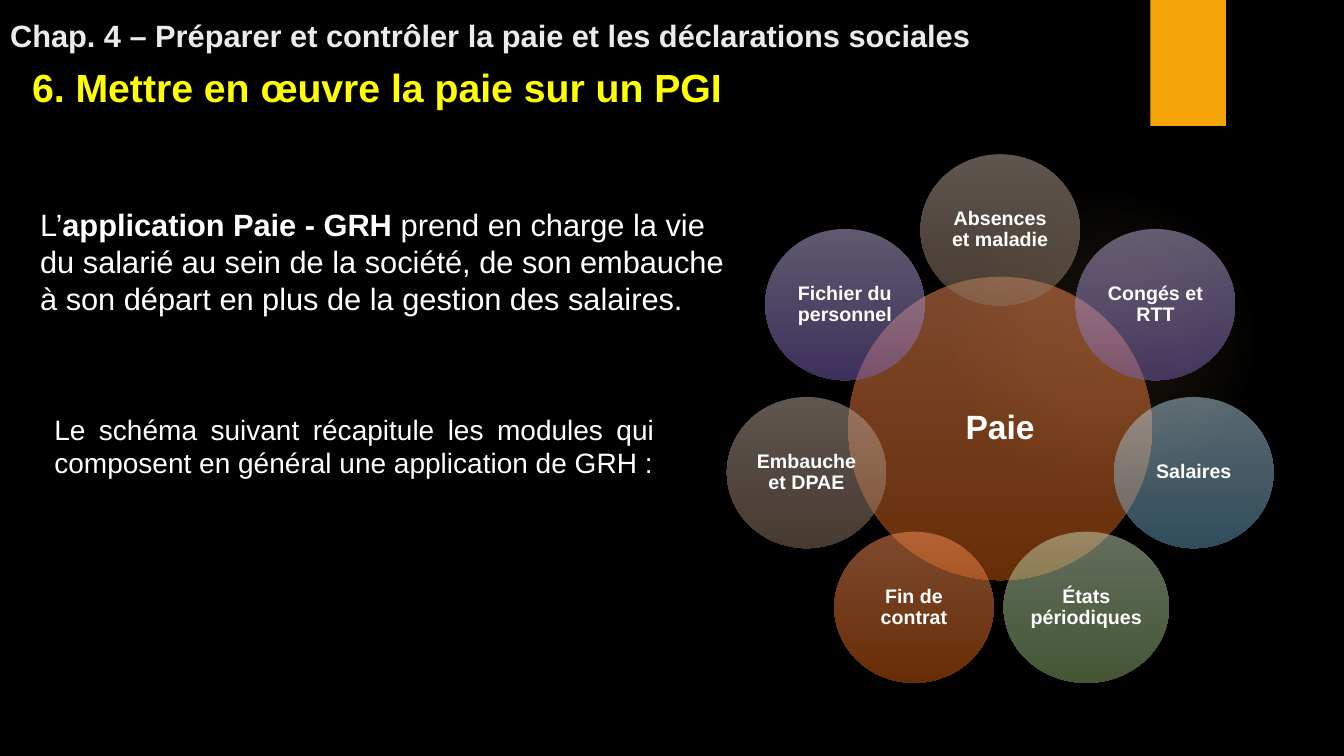
from math import cos, pi, sin

from pptx import Presentation
from pptx.dml.color import RGBColor
from pptx.enum.shapes import MSO_SHAPE
from pptx.enum.text import MSO_ANCHOR, MSO_AUTO_SIZE, PP_ALIGN
from pptx.oxml import parse_xml
from pptx.oxml.ns import nsdecls, qn
from pptx.util import Inches, Pt

BLACK = RGBColor(0x00, 0x00, 0x00)
WHITE = RGBColor(0xFF, 0xFF, 0xFF)
PALE = RGBColor(0xEB, 0xEB, 0xEB)
YELLOW = RGBColor(0xFF, 0xFF, 0x00)
AMBER = RGBColor(0xF5, 0xA4, 0x08)
GLOW = RGBColor(0xFA, 0xC9, 0x6A)
ORANGE = RGBColor(0xFB, 0x93, 0x5D), RGBColor(0xCF, 0x5B, 0x0F)
TAUPE = RGBColor(0xBE, 0xAC, 0x9F), RGBColor(0x8E, 0x74, 0x63)
PURPLE = RGBColor(0xC0, 0xB3, 0xDF), RGBColor(0x7B, 0x61, 0xB6)
BLUE = RGBColor(0xB5, 0xD2, 0xE1), RGBColor(0x63, 0x9B, 0xB8)
GREEN = RGBColor(0xC8, 0xDB, 0xB9), RGBColor(0x89, 0xAD, 0x6C)

DOWN = '<a:lin ang="5400000" scaled="0"/>'
ROUND = ('<a:path path="circle"><a:fillToRect l="50000" t="50000" '
         'r="50000" b="50000"/></a:path>')
HUB = 9.92, 4.25
REACH = 1.97
PARTS = [
    ("Absences et maladie", TAUPE, 1.58),
    ("Congés et RTT", PURPLE, 1.58),
    ("Salaires", BLUE, 1.58),
    ("États périodiques", GREEN, 1.64),
    ("Fin de contrat", ORANGE, 1.58),
    ("Embauche et DPAE", TAUPE, 1.58),
    ("Fichier du personnel", PURPLE, 1.58),
]


def add_run(para, text, size, color=WHITE, bold=False):
    """Add one formatted run to a paragraph."""
    run = para.add_run()
    run.text = text
    font = run.font
    font.name, font.size, font.bold = "Arial", Pt(size), bold
    font.color.rgb = color


def add_plain(slide, kind, left, top, width, height):
    """Add a preset shape without line or shadow."""
    shape = slide.shapes.add_shape(
        kind, Inches(left), Inches(top), Inches(width), Inches(height))
    shape.shadow.inherit = False
    shape.line.fill.background()
    return shape


def shade(shape, stops, course):
    """Fill a shape with (position, colour, opacity) stops in percent."""
    marks = "".join(
        f'<a:gs pos="{pos * 1000}"><a:srgbClr val="{color}">'
        f'<a:alpha val="{alpha * 1000}"/></a:srgbClr></a:gs>'
        for pos, color, alpha in stops)
    fill = parse_xml(f'<a:gradFill {nsdecls("a")} rotWithShape="1">'
                     f'<a:gsLst>{marks}</a:gsLst>{course}</a:gradFill>')
    shape._element.spPr.find(qn("a:prstGeom")).addnext(fill)


def add_disc(slide, text, tones, center, width, height, size, inset):
    """Add a translucent labelled disc around a centre."""
    x, y = center
    disc = add_plain(slide, MSO_SHAPE.OVAL,
                     x - width / 2, y - height / 2, width, height)
    shade(disc, [(0, tones[0], 50), (100, tones[1], 50)], DOWN)
    frame = disc.text_frame
    frame.word_wrap = True
    frame.vertical_anchor = MSO_ANCHOR.MIDDLE
    frame.margin_left = frame.margin_right = Inches(inset)
    frame.margin_top = frame.margin_bottom = Inches(inset)
    para = frame.paragraphs[0]
    para.alignment = PP_ALIGN.CENTER
    para.line_spacing = 0.9
    add_run(para, text, size, bold=True)


def add_wheel(slide):
    """Add the hub and its ring of modules."""
    add_disc(slide, "Paie", ORANGE, HUB, 3.01, 3.01, 24, 0.03)
    for i, (text, tones, width) in enumerate(PARTS):
        turn = 2 * pi * i / len(PARTS)
        center = HUB[0] + REACH * sin(turn), HUB[1] - REACH * cos(turn)
        add_disc(slide, text, tones, center, width, 1.5, 14, 0.02)


def add_text(slide, left, top, width, height, align=PP_ALIGN.LEFT):
    """Add a wrapping text box and return its paragraph."""
    box = slide.shapes.add_textbox(
        Inches(left), Inches(top), Inches(width), Inches(height))
    frame = box.text_frame
    frame.word_wrap = True
    frame.auto_size = MSO_AUTO_SIZE.SHAPE_TO_FIT_TEXT
    para = frame.paragraphs[0]
    para.alignment = align
    return para


def set_title(slide, text):
    """Place and format the chapter title."""
    title = slide.shapes.title
    title.left, title.top = Inches(0), Inches(-0.02)
    title.width, title.height = Inches(12.72), Inches(0.6)
    frame = title.text_frame
    frame.auto_size = MSO_AUTO_SIZE.NONE
    frame.vertical_anchor = MSO_ANCHOR.BOTTOM
    para = frame.paragraphs[0]
    para.alignment = PP_ALIGN.LEFT
    add_run(para, text, 22, PALE, True)


def main():
    """Build and save the slide."""
    deck = Presentation()
    deck.slide_width, deck.slide_height = Inches(13.33), Inches(7.5)
    slide = deck.slides.add_slide(deck.slide_layouts[0])
    slide.background.fill.solid()
    slide.background.fill.fore_color.rgb = BLACK
    spare = slide.placeholders[1]._element
    spare.getparent().remove(spare)

    glow = add_plain(slide, MSO_SHAPE.OVAL, 9.41, 1.83, 3.08, 3.08)
    shade(glow, [(0, GLOW, 7), (36, GLOW, 6), (69, GLOW, 0)], ROUND)
    tab = add_plain(slide, MSO_SHAPE.RECTANGLE, 11.41, 0, 0.75, 1.25)
    tab.fill.solid()
    tab.fill.fore_color.rgb = AMBER

    set_title(slide, "Chap. 4 – Préparer et contrôler la paie "
                     "et les déclarations sociales")
    head = add_text(slide, 0.22, 0.58, 8.27, 0.57)
    add_run(head, "6. Mettre en œuvre la paie sur un PGI", 28, YELLOW, True)

    intro = add_text(slide, 0.3, 1.99, 7.02, 1.21)
    add_run(intro, "L’", 22)
    add_run(intro, "application Paie - GRH ", 22, bold=True)
    add_run(intro, "prend en charge la vie du salarié au sein de la société, "
                   "de son embauche à son départ en plus de la gestion "
                   "des salaires.", 22)
    add_wheel(slide)
    lead = add_text(slide, 0.44, 4.04, 6.15, 0.77, PP_ALIGN.JUSTIFY)
    add_run(lead, "Le schéma suivant récapitule les modules qui composent "
                  "en général une application de GRH :", 20)
    deck.save("out.pptx")


if __name__ == "__main__":
    main()
